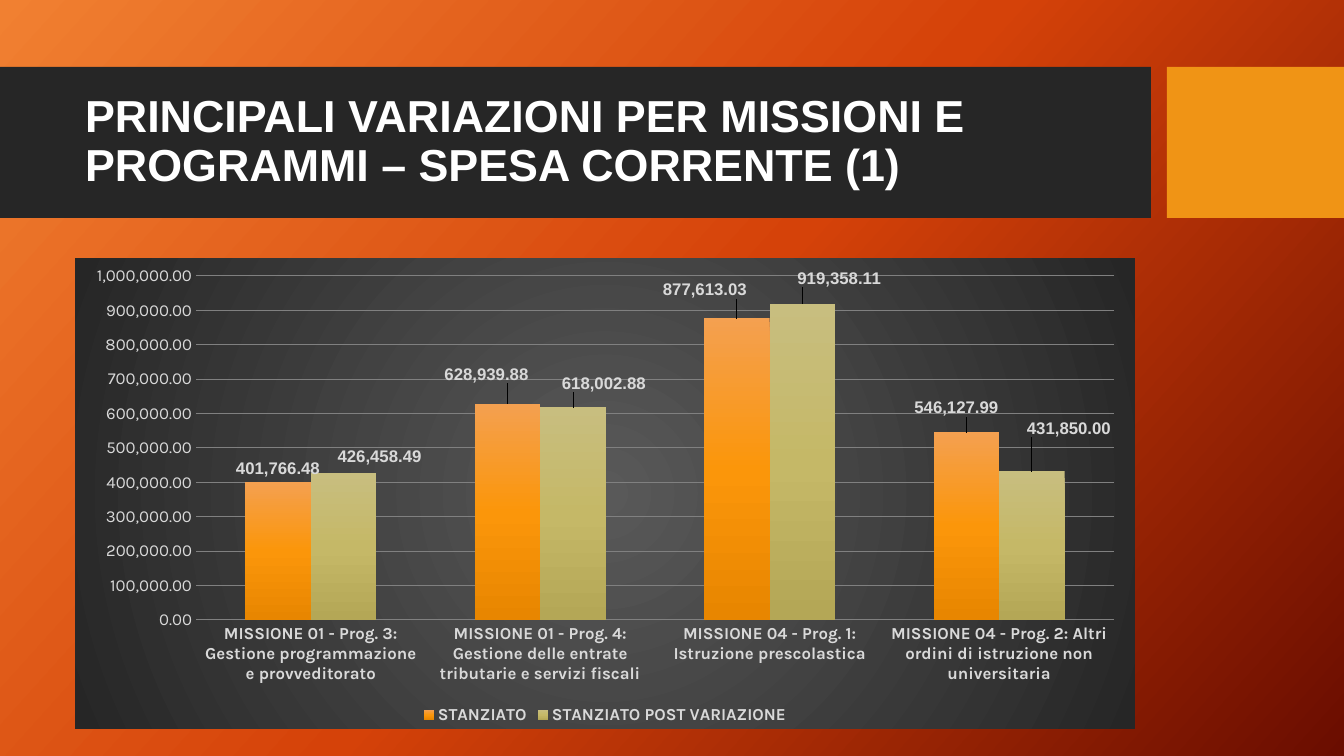
from dataclasses import dataclass
from lxml import etree
from pptx import Presentation
from pptx.chart.data import CategoryChartData
from pptx.dml.color import RGBColor
from pptx.enum.chart import (XL_CHART_TYPE as ChartType, XL_LABEL_POSITION as LabelPosition,
                             XL_LEGEND_POSITION as LegendPosition, XL_TICK_MARK as TickMark)
from pptx.enum.shapes import MSO_SHAPE as Preset
from pptx.enum.text import MSO_ANCHOR as Anchor, MSO_AUTO_SIZE as AutoSize, PP_ALIGN as Align
from pptx.oxml import parse_xml
from pptx.oxml.ns import nsdecls, qn
from pptx.util import Pt

HEADING = "PRINCIPALI VARIAZIONI PER MISSIONI E PROGRAMMI – SPESA CORRENTE (1)"
PROGRAMMES = [
    "MISSIONE 01 - Prog. 3: Gestione programmazione e provveditorato",
    "MISSIONE 01 - Prog. 4: Gestione delle entrate tributarie e servizi fiscali",
    "MISSIONE 04 - Prog. 1: Istruzione prescolastica",
    "MISSIONE 04 - Prog. 2: Altri ordini di istruzione non universitaria",
]
BUDGETS = {
    "STANZIATO": [401766.48, 628939.88, 877613.03, 546127.99],
    "STANZIATO POST VARIAZIONE": [426458.49, 618002.88, 919358.11, 431850],
}
LABEL_SHIFTS = [
    {1: (-21, -16), 2: (-32, -15), 3: (-10, -11)},
    {0: (36, -4), 1: (31, -11), 2: (37, -12), 3: (37, -30)},
]
SLIDE = (1344, 756)
BANDS = [((0, 67, 1151, 151), "262626"), ((1167, 67, 177, 151), "F09415")]
HEADING_BOX = (75, 83, 1060, 119)
CHART_BOX = (75, 258, 1060, 471)
PLOT_BOX = (196, 276, 918, 344)
AMOUNT = "#,##0.00"
PX = 12192000 // 1344


@dataclass(frozen=True)
class Theme:
    background: tuple = ("F18031", "D54209", "6A0D00")
    panel: tuple = ("595959", "262626")
    bars: tuple = (("F4A050", "FB960A", "E88600"), ("C8BE7F", "C5B867", "B4A756"))
    white: str = "FFFFFF"
    label: str = "D9D9D9"
    grid: str = "808080"
    heading_font: str = "Arial"
    chart_font: str = "Karla"
    heading_size: int = 32
    chart_size: int = 10
    label_size: int = 12


THEME = Theme()


def emu(box):
    return [value * PX for value in box]


def set_all(target, **values):
    for name, value in values.items():
        setattr(target, name, value)


def style(font, face, size, color, bold=False):
    set_all(font, name=face, size=Pt(size), bold=bold)
    font.color.rgb = RGBColor.from_string(color)


def gradient(colors, angle=None):
    last = len(colors) - 1
    stops = "".join(f'<a:gs pos="{100000 * i // last}"><a:srgbClr val="{color}"/></a:gs>'
                    for i, color in enumerate(colors))
    if angle is None:
        direction = ('<a:path path="circle"><a:fillToRect l="50000" t="50000" '
                     'r="50000" b="50000"/></a:path>')
    else:
        direction = f'<a:lin ang="{angle * 60000}" scaled="0"/>'
    return parse_xml(f'<a:gradFill {nsdecls("a")} rotWithShape="1">'
                     f'<a:gsLst>{stops}</a:gsLst>{direction}</a:gradFill>')


def swap_solid(fill, root, colors, angle):
    fill.solid()
    solid = next(root.iter(qn("a:solidFill")))
    solid.getparent().replace(solid, gradient(colors, angle))


def manual_layout(**values):
    layout = etree.Element(qn("c:layout"))
    manual = etree.SubElement(layout, qn("c:manualLayout"))
    for name, value in values.items():
        etree.SubElement(manual, qn(f"c:{name}")).set("val", str(value))
    return layout


def add_heading(slide):
    heading = slide.shapes.title
    for box, color in BANDS:
        band = slide.shapes.add_shape(Preset.RECTANGLE, *emu(box))
        band.shadow.inherit = False
        band.fill.solid()
        band.fill.fore_color.rgb = RGBColor.from_string(color)
        band.line.fill.background()
        heading._element.addprevious(band._element)
    set_all(heading, **dict(zip(("left", "top", "width", "height"), emu(HEADING_BOX))))
    heading.text = HEADING
    set_all(heading.text_frame, word_wrap=True, auto_size=AutoSize.NONE,
            vertical_anchor=Anchor.MIDDLE)
    paragraph = heading.text_frame.paragraphs[0]
    set_all(paragraph, alignment=Align.LEFT, line_spacing=0.9)
    style(paragraph.runs[0].font, THEME.heading_font, THEME.heading_size, THEME.white, True)


def format_axes(chart):
    for axis, bold in ((chart.category_axis, True), (chart.value_axis, False)):
        set_all(axis, major_tick_mark=TickMark.NONE, minor_tick_mark=TickMark.NONE)
        axis.format.line.fill.background()
        style(axis.tick_labels.font, THEME.chart_font, THEME.label_size, THEME.label, bold)
    amounts = chart.value_axis
    set_all(amounts, minimum_scale=0, maximum_scale=1000000, major_unit=100000,
            has_major_gridlines=True)
    set_all(amounts.tick_labels, number_format=AMOUNT, number_format_is_linked=False)
    grid = amounts.major_gridlines.format.line
    grid.width = Pt(0.75)
    grid.color.rgb = RGBColor.from_string(THEME.grid)


def format_bars(chart):
    label_style = (THEME.heading_font, THEME.label_size, THEME.label, True)
    for budget, colors, shifts in zip(chart.plots[0].series, THEME.bars, LABEL_SHIFTS):
        budget.invert_if_negative = False
        swap_solid(budget.format.fill, budget._element, colors, 90)
        set_all(budget.data_labels, show_value=True, number_format=AMOUNT,
                number_format_is_linked=False, position=LabelPosition.OUTSIDE_END)
        style(budget.data_labels.font, *label_style)
        for index, (dx, dy) in shifts.items():
            label = budget.points[index].data_label
            label.position = LabelPosition.OUTSIDE_END
            style(label.font, *label_style)
            entry = next(item for item in budget._element.iter(qn("c:dLbl"))
                         if item.find(qn("c:idx")).get("val") == str(index))
            entry.find(qn("c:idx")).addnext(manual_layout(
                x=round(dx / CHART_BOX[2], 4), y=round(dy / CHART_BOX[3], 4)))


def add_budget_chart(slide):
    data = CategoryChartData(number_format=AMOUNT)
    data.categories = PROGRAMMES
    for name, amounts in BUDGETS.items():
        data.add_series(name, amounts)
    chart = slide.shapes.add_chart(ChartType.COLUMN_CLUSTERED, *emu(CHART_BOX), data).chart
    set_all(chart, has_title=False, has_legend=True)
    style(chart.font, THEME.chart_font, THEME.chart_size, THEME.white)
    set_all(chart.legend, position=LegendPosition.BOTTOM, include_in_layout=False)
    style(chart.legend.font, THEME.chart_font, THEME.label_size, THEME.label, True)
    set_all(chart.plots[0], gap_width=150, overlap=0, vary_by_categories=False)
    format_axes(chart)
    format_bars(chart)

    root = chart._chartSpace
    panel = etree.Element(qn("c:spPr"))
    panel.append(gradient(THEME.panel))
    etree.SubElement(etree.SubElement(panel, qn("a:ln")), qn("a:noFill"))
    root.find(qn("c:txPr")).addprevious(panel)

    left, top, width, height = CHART_BOX
    x, y, w, h = PLOT_BOX
    plot_area = next(root.iter(qn("c:plotArea")))
    for automatic in plot_area.findall(qn("c:layout")):
        plot_area.remove(automatic)
    plot_area.insert(0, manual_layout(
        layoutTarget="inner", xMode="edge", yMode="edge",
        x=round((x - left) / width, 4), y=round((y - top) / height, 4),
        w=round(w / width, 4), h=round(h / height, 4)))


def main():
    deck = Presentation()
    deck.slide_width, deck.slide_height = emu(SLIDE)
    slide = deck.slides.add_slide(deck.slide_layouts[5])
    swap_solid(slide.background.fill, slide._element, THEME.background, 42)
    add_heading(slide)
    add_budget_chart(slide)
    deck.save("out.pptx")


if __name__ == "__main__":
    main()
